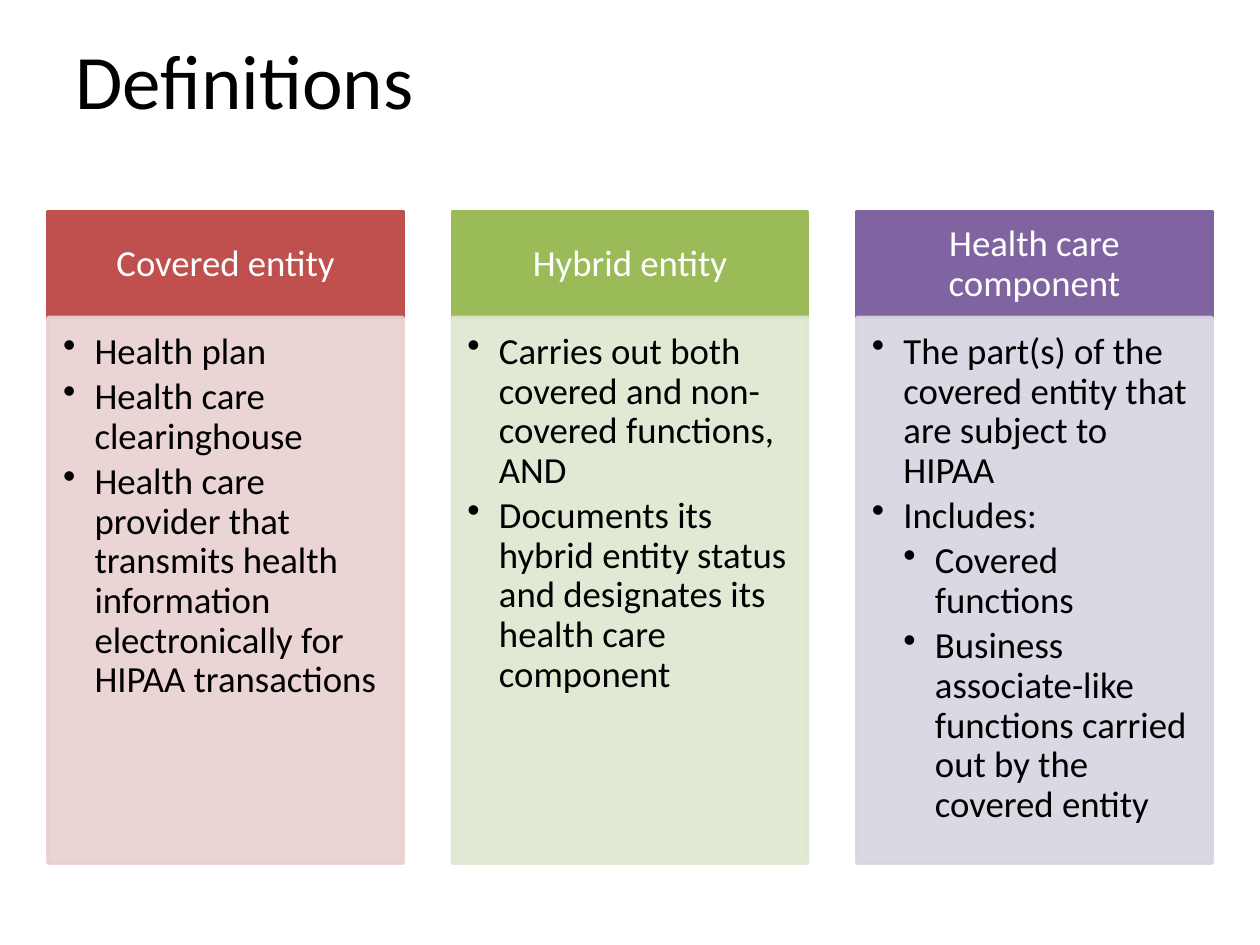
from lxml import etree
from pptx import Presentation
from pptx.dml.color import RGBColor
from pptx.enum.shapes import MSO_SHAPE as Shape
from pptx.enum.text import MSO_ANCHOR as Anchor, PP_ALIGN as Align
from pptx.oxml.ns import qn
from pptx.util import Inches, Pt

FONT = "Calibri"
TEXT_SIZE = 21
HEAD_H = 0.84
COLUMNS = [
    ("Covered entity", "C0504D", "E8D0D0", [
        (1, "Health plan"),
        (1, "Health care clearinghouse"),
        (1, "Health care provider that transmits health information "
            "electronically for HIPAA transactions"),
    ]),
    ("Hybrid entity", "9BBB59", "DEE7D1", [
        (1, "Carries out both covered and non-covered functions, AND"),
        (1, "Documents its hybrid entity status and designates its "
            "health care component"),
    ]),
    ("Health care component", "8064A2", "D8D3E0", [
        (1, "The part(s) of the covered entity that are subject to HIPAA"),
        (1, "Includes:"),
        (2, "Covered functions"),
        (2, "Business associate-like functions carried out by the "
            "covered entity"),
    ]),
]


def paint(color_format, color):
    color_format.rgb = RGBColor.from_string(color)


def style(p, size, color):
    for r in p.runs:
        r.font.name = FONT
        r.font.size = Pt(size)
        paint(r.font.color, color)


def set_alpha(sp, percent):
    for clr in sp._element.spPr.iter(qn("a:srgbClr")):
        etree.SubElement(clr, qn("a:alpha")).set("val", str(percent * 1000))


def add_bullet(p, level):
    p.level = level
    pPr = p._p.get_or_add_pPr()
    pPr.set("marL", str(Inches(0.25 * level)))
    pPr.set("indent", str(Inches(-0.25)))
    etree.SubElement(pPr, qn("a:buChar")).set("char", "•")


def add_panel(slide, box, color, insets, anchor):
    sp = slide.shapes.add_shape(Shape.RECTANGLE, *map(Inches, box))
    sp.shadow.inherit = False
    sp.fill.solid()
    paint(sp.fill.fore_color, color)
    paint(sp.line.color, color)
    sp.line.width = Pt(2)
    tf = sp.text_frame
    tf.word_wrap = True
    tf.vertical_anchor = anchor
    tf.margin_left, tf.margin_top, tf.margin_right, tf.margin_bottom = map(Inches, insets)
    return sp


def add_column(slide, box, heading, head_color, body_color, items):
    x, y, w, h = box
    head = add_panel(slide, (x, y, w, HEAD_H), head_color,
                     (0.16, 0.09, 0.16, 0.09), Anchor.MIDDLE)
    p = head.text_frame.paragraphs[0]
    p.text = heading
    p.alignment = Align.CENTER
    p.line_spacing = 0.9
    style(p, TEXT_SIZE, "FFFFFF")

    body = add_panel(slide, (x, y + HEAD_H, w, h - HEAD_H), body_color,
                     (0.12, 0.12, 0.16, 0.18), Anchor.TOP)
    set_alpha(body, 90)
    tf = body.text_frame
    for i, (level, text) in enumerate(items):
        p = tf.add_paragraph() if i else tf.paragraphs[0]
        p.text = text
        p.alignment = Align.LEFT
        p.line_spacing = 0.9
        p.space_after = Pt(0.15 * TEXT_SIZE)
        add_bullet(p, level)
        style(p, TEXT_SIZE, "000000")


def add_title(slide, box, text):
    title = slide.shapes.title
    title.left, title.top, title.width, title.height = map(Inches, box)
    tf = title.text_frame
    tf.text = text
    tf.vertical_anchor = Anchor.MIDDLE
    p = tf.paragraphs[0]
    p.alignment = Align.LEFT
    style(p, 44, "000000")


def add_columns(slide, box, columns, gap):
    x, y, w, h = box
    col_w = (w - gap * (len(columns) - 1)) / len(columns)
    for i, column in enumerate(columns):
        add_column(slide, (x + i * (col_w + gap), y, col_w, h), *column)


def main():
    prs = Presentation()
    prs.slide_width, prs.slide_height = Inches(10), Inches(7.5)
    slide = prs.slides.add_slide(prs.slide_layouts[5])
    add_title(slide, (0.5, 0, 9, 1.25), "Definitions")
    add_columns(slide, (0.38, 1.68, 9.24, 5.17), COLUMNS, 0.39)
    prs.save("out.pptx")


if __name__ == "__main__":
    main()
